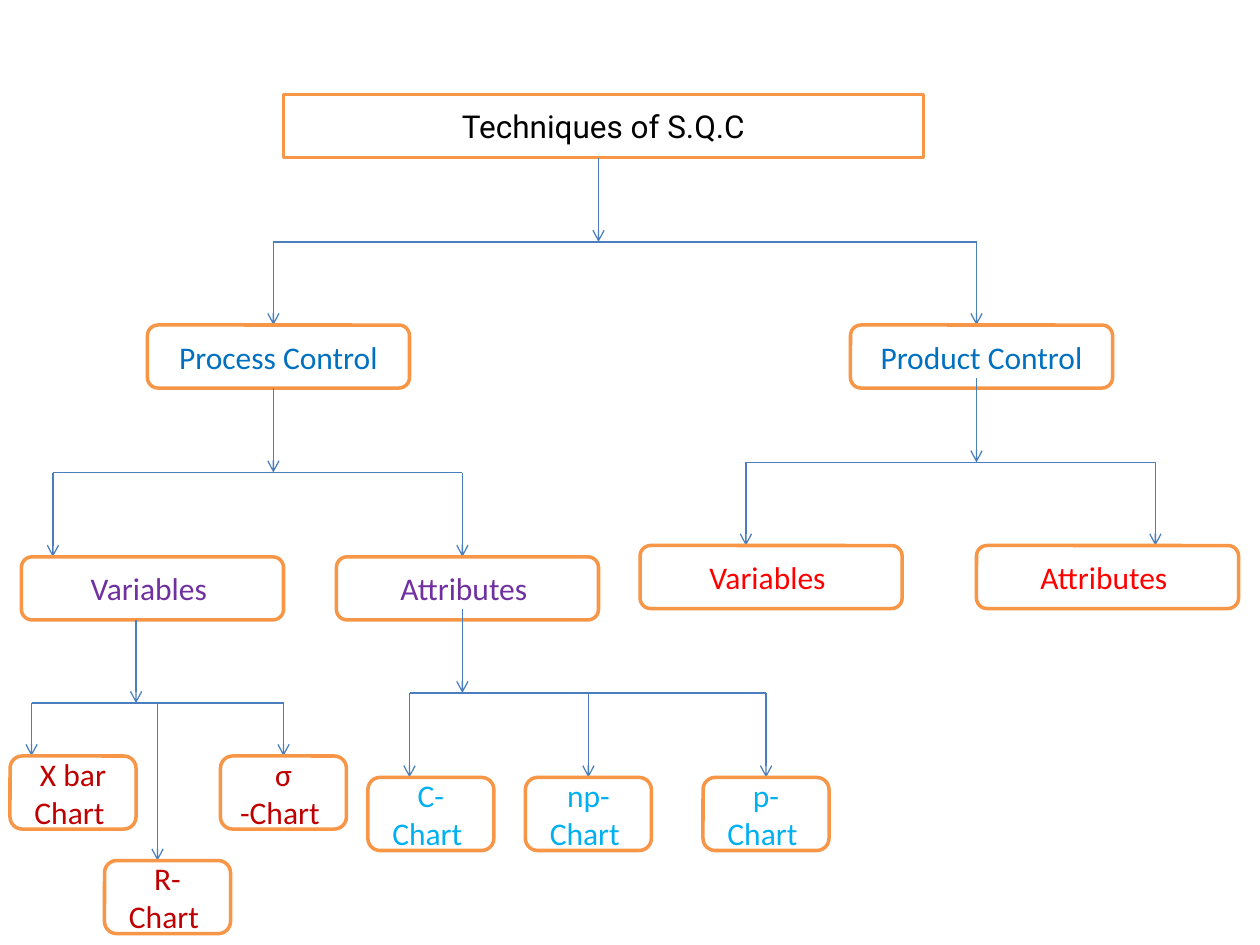
from lxml.etree import SubElement
from pptx import Presentation
from pptx.dml.color import RGBColor
from pptx.enum.shapes import MSO_CONNECTOR, MSO_SHAPE
from pptx.enum.text import MSO_ANCHOR, MSO_AUTO_SIZE, PP_ALIGN
from pptx.oxml.ns import qn
from pptx.util import Inches, Pt

HUES = {
    "paper": "FFFFFF", "edge": "F79646", "wire": "4B7EBC", "head": "000000",
    "blue": "0070C0", "plum": "7030A0", "red": "FF0000", "wine": "C00000",
    "sky": "00B0F0",
}
FRAME = {
    "word_wrap": True, "auto_size": MSO_AUTO_SIZE.NONE,
    "vertical_anchor": MSO_ANCHOR.MIDDLE,
    "margin_left": Inches(0.1), "margin_right": Inches(0.1),
    "margin_top": Inches(0.05), "margin_bottom": Inches(0.05),
}
WIDE = (2.08, 0.5)
SMALL = (1, 0.58)

# Each tier: stem x, stem top, bar y, box size, hue, then (text, drop x, left, top).
TIERS = [
    (4.75, 1.25, 1.92, WIDE, "blue", [
        ("Process Control", 2.17, 1.17, 2.58),
        ("Product Control", 7.75, 6.75, 2.58)]),
    (2.17, 3.08, 3.75, WIDE, "plum", [
        ("Variables ", 0.42, 0.17, 4.42),
        ("Attributes ", 3.67, 2.67, 4.42)]),
    (7.75, 3, 3.67, WIDE, "red", [
        ("Variables ", 5.92, 5.08, 4.33),
        ("Attributes ", 9.17, 7.75, 4.33)]),
    (1.08, 4.92, 5.58, SMALL, "wine", [
        ("X bar Chart ", 0.25, 0.08, 6),
        ("R-Chart ", 1.25, 0.83, 6.83),
        ("σ -Chart ", 2.25, 1.75, 6)]),
    (3.67, 4.83, 5.5, SMALL, "sky", [
        ("C-Chart ", 3.25, 2.92, 6.17),
        ("np-Chart ", 4.67, 4.17, 6.17),
        ("p-Chart ", 6.08, 5.58, 6.17)]),
]


def tint(name):
    """Return the colour of a named hue."""
    return RGBColor.from_string(HUES[name])


def assign(item, values):
    """Set each attribute in values on item."""
    for key, value in values.items():
        setattr(item, key, value)


def dress(shape, text, hue, font):
    """Give a box its fill, outline and centred text."""
    shape.fill.solid()
    shape.fill.fore_color.rgb = tint("paper")
    shape.line.color.rgb = tint("edge")
    shape.line.width = Pt(2)
    frame = shape.text_frame
    frame.text = text
    assign(frame, FRAME)
    para = frame.paragraphs[0]
    para.alignment = PP_ALIGN.CENTER
    face = para.runs[0].font
    assign(face, {"name": font, "size": Pt(18), "bold": False})
    face.color.rgb = tint(hue)


def title(slide, box, text):
    """Place the slide title in the given box."""
    shape = slide.shapes.title
    assign(shape, dict(zip(("left", "top", "width", "height"), map(Inches, box))))
    dress(shape, text, "head", "Roboto")


def node(slide, box, text, hue):
    """Place a rounded box with its label."""
    shape = slide.shapes.add_shape(MSO_SHAPE.ROUNDED_RECTANGLE, *map(Inches, box))
    shape.shadow.inherit = False
    dress(shape, text, hue, "Calibri")


def wire(slide, ends, arrow=True):
    """Draw a thin line, with an open arrowhead if asked."""
    link = slide.shapes.add_connector(MSO_CONNECTOR.STRAIGHT, *map(Inches, ends))
    link.line.color.rgb = tint("wire")
    link.line.width = Pt(0.75)
    if arrow:
        SubElement(link.line._get_or_add_ln(), qn("a:tailEnd"), type="arrow")
    SubElement(link._element.spPr, qn("a:effectLst"))


def tier(slide, stem, top, bar, size, hue, kids):
    """Draw a stem, its crossbar and the boxes that hang from it."""
    drops = [kid[1] for kid in kids]
    wire(slide, (stem, top, stem, bar))
    wire(slide, (min(drops), bar, max(drops), bar), arrow=False)
    for text, drop, left, end in kids:
        wire(slide, (drop, bar, drop, end))
        node(slide, (left, end, *size), text, hue)


def main():
    """Build the chart of techniques and save it."""
    deck = Presentation()
    assign(deck, {"slide_width": Inches(10), "slide_height": Inches(7.5)})
    slide = deck.slides.add_slide(deck.slide_layouts[5])
    title(slide, (2.25, 0.75, 5.08, 0.5), "Techniques of S.Q.C")
    for row in TIERS:
        tier(slide, *row)
    deck.save("out.pptx")


if __name__ == "__main__":
    main()
